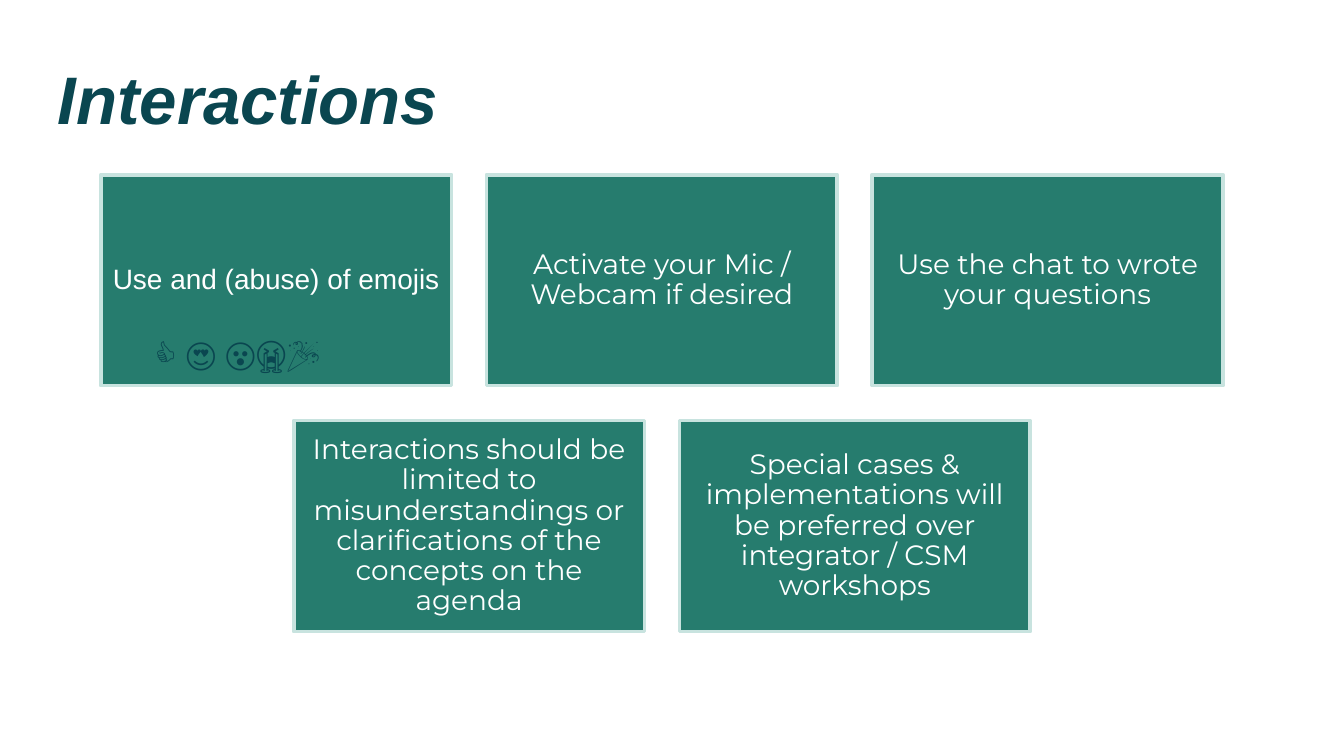
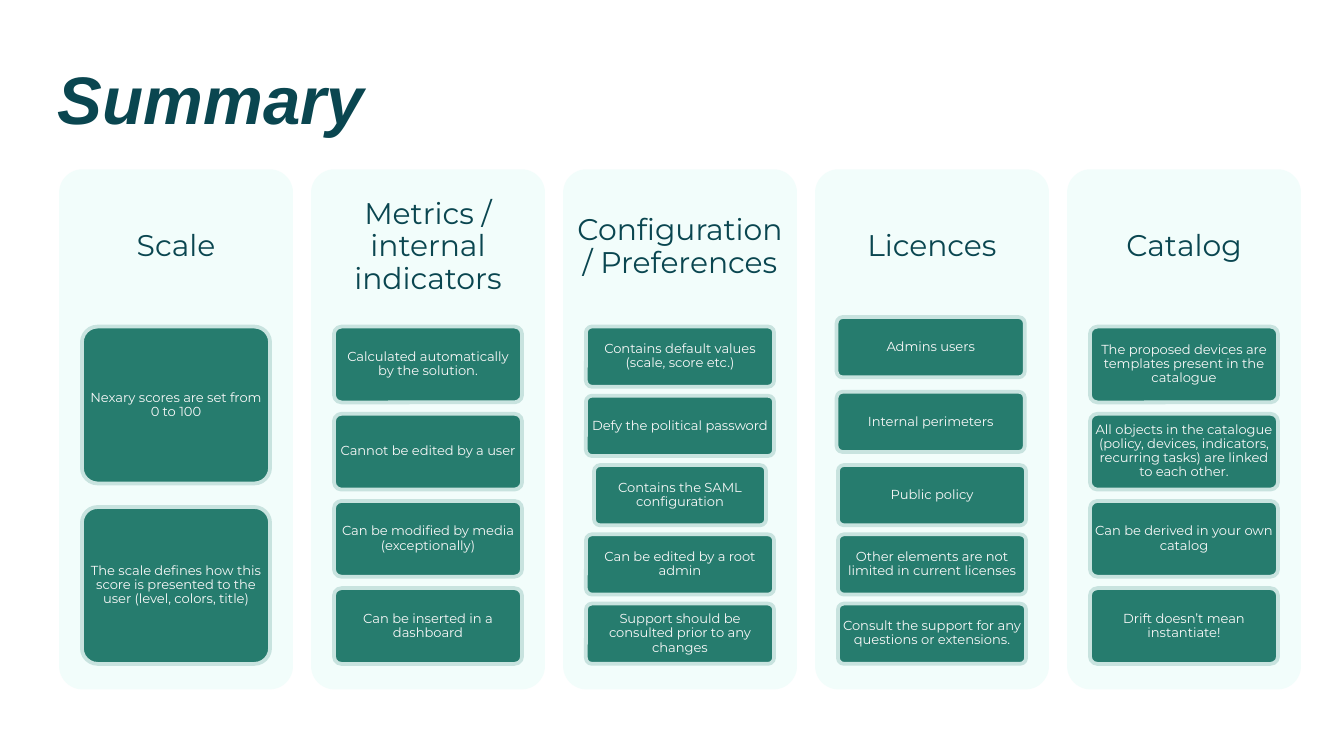
from pptx import Presentation
from pptx.dml.color import RGBColor
from pptx.enum.shapes import MSO_SHAPE
from pptx.enum.text import MSO_ANCHOR, MSO_AUTO_SIZE, PP_ALIGN
from pptx.util import Inches, Pt

INK, GREEN, MINT, PALE = "0A4650", "267C6E", "C8E3DF", "F2FDFB"
WHITE, OFF_WHITE = "FFFFFF", "F8F8F8"
HEADING_FONT, BODY_FONT = "Arial", "Montserrat"

RULE_ROWS = [
    ["Use and (abuse) of emojis",
     "Activate your Mic / Webcam if desired",
     "Use the chat to wrote your questions"],
    ["Interactions should be limited to misunderstandings or clarifications "
     "of the concepts on the agenda",
     "Special cases & implementations will be preferred over integrator / CSM workshops"],
]

TOPICS = {
    "Scale": [
        "Nexary scores are set from 0 to 100",
        "The scale defines how this score is presented to the user (level, colors, title)"],
    "Metrics / internal indicators": [
        "Calculated automatically by the solution.",
        "Cannot be edited by a user",
        "Can be modified by media (exceptionally)",
        "Can be inserted in a dashboard"],
    "Configuration / Preferences": [
        "Contains default values (scale, score etc.)",
        "Defy the political password",
        "Contains the SAML configuration",
        "Can be edited by a root admin",
        "Support should be consulted prior to any changes"],
    "Licences": [
        "Admins users",
        "Internal perimeters",
        "Public policy",
        "Other elements are not limited in current licenses",
        "Consult the support for any questions or extensions."],
    "Catalog": [
        "The proposed devices are templates present in the catalogue",
        "All objects in the catalogue (policy, devices, indicators, recurring tasks) "
        "are linked to each other.",
        "Can be derived in your own catalog",
        "Drift doesn’t mean instantiate!"],
}

# Points set off the regular stack: shift right, shift down, extra width
ADJUSTMENTS = {
    "Contains the SAML configuration": (0.06, 0, -0.12),
    "Admins users": (-0.01, -0.07, 0),
    "Internal perimeters": (-0.01, -0.03, 0),
}


def rgb(value):
    return RGBColor.from_string(value)


def inches(*lengths):
    return [Inches(length) for length in lengths]


def write(frame, text, size, color, font=BODY_FONT, insets=(0, 0), align=PP_ALIGN.CENTER):
    """Fill a frame with one middle-anchored paragraph; insets are side, top/bottom."""
    frame.word_wrap = True
    frame.auto_size = MSO_AUTO_SIZE.NONE
    frame.vertical_anchor = MSO_ANCHOR.MIDDLE
    frame.margin_left = frame.margin_right = Inches(insets[0])
    frame.margin_top = frame.margin_bottom = Inches(insets[1])
    frame.text = text
    paragraph = frame.paragraphs[0]
    paragraph.alignment = align
    paragraph.font.size = Pt(size)
    paragraph.font.name = font
    paragraph.font.color.rgb = rgb(color)
    return paragraph


def add_box(slide, kind, box, fill, outline=None):
    shape = slide.shapes.add_shape(kind, *inches(*box))
    shape.shadow.inherit = False
    shape.fill.solid()
    shape.fill.fore_color.rgb = rgb(fill)
    if kind == MSO_SHAPE.ROUNDED_RECTANGLE:
        shape.adjustments[0] = 0.1
    if outline:
        shape.line.color.rgb = rgb(outline)
        shape.line.width = Pt(2)
    else:
        shape.line.fill.background()
    return shape


def add_titled_slide(prs, heading):
    slide = prs.slides.add_slide(prs.slide_layouts[5])
    title = slide.shapes.title
    title.left, title.top, title.width, title.height = inches(0.43, 0.37, 8.44, 0.71)
    paragraph = write(title.text_frame, heading, 36, INK, HEADING_FONT, align=PP_ALIGN.LEFT)
    paragraph.font.bold = paragraph.font.italic = True
    return slide


def add_rule_tiles(slide, left, top, width):
    """Lay out the tiles in rows, each row centred in the width."""
    tile_w, tile_h, gap = 2.61, 1.57, 0.26
    for row, rules in enumerate(RULE_ROWS):
        row_w = len(rules) * (tile_w + gap) - gap
        row_left = left + (width - row_w) / 2
        for column, rule in enumerate(rules):
            box = (row_left + column * (tile_w + gap), top + row * (tile_h + gap),
                   tile_w, tile_h)
            tile = add_box(slide, MSO_SHAPE.RECTANGLE, box, GREEN, MINT)
            font = HEADING_FONT if "emojis" in rule else BODY_FONT
            write(tile.text_frame, rule, 15, WHITE, font, (0.06, 0.06)).line_spacing = 0.9


def add_emojis(slide, left, top):
    emojis = slide.shapes.add_textbox(*inches(left, top, 2.23, 0.4))
    write(emojis.text_frame, "👍 😍 😮😭🎉", 18, INK, insets=(0.1, 0.05), align=PP_ALIGN.LEFT)
    emojis.text_frame.vertical_anchor = MSO_ANCHOR.TOP
    emojis.text_frame.auto_size = MSO_AUTO_SIZE.SHAPE_TO_FIT_TEXT


def add_points(slide, points, left, top, width, height):
    """Stack the points over the full height, with gaps in proportion to them."""
    gap_ratio = 0.15
    point_h = height / (len(points) + (len(points) - 1) * gap_ratio)
    for index, point in enumerate(points):
        right, down, wider = ADJUSTMENTS.get(point, (0, 0, 0))
        box = (left + right, top + index * point_h * (1 + gap_ratio) + down,
               width + wider, point_h)
        pill = add_box(slide, MSO_SHAPE.ROUNDED_RECTANGLE, box, GREEN, MINT)
        write(pill.text_frame, point, 7, OFF_WHITE, insets=(0.02, 0.01)).line_spacing = 0.9


def add_topic(slide, topic, points, left, top, width, height):
    add_box(slide, MSO_SHAPE.ROUNDED_RECTANGLE, (left, top, width, height), PALE)
    header = slide.shapes.add_textbox(*inches(left, top, width, height * 0.3))
    write(header.text_frame, topic, 16, INK, insets=(0.07, 0.07)).line_spacing = 0.9
    add_points(slide, points, left + 0.17, top + 1.17, width - 0.34, height - 1.36)


def build_interactions(prs):
    slide = add_titled_slide(prs, "Interactions")
    add_rule_tiles(slide, 0.75, 1.3, 8.35)
    add_emojis(slide, 1.05, 2.43)


def build_summary(prs):
    slide = add_titled_slide(prs, "Summary")
    left, full_w, topic_w = 0.44, 9.24, 1.74
    pitch = (full_w - topic_w) / (len(TOPICS) - 1)
    for index, (topic, points) in enumerate(TOPICS.items()):
        add_topic(slide, topic, points, left + index * pitch, 1.26, topic_w, 3.87)


def main():
    prs = Presentation()
    prs.slide_width = Inches(10)
    prs.slide_height = prs.slide_width * 9 // 16
    build_interactions(prs)
    build_summary(prs)
    prs.save("out.pptx")


if __name__ == "__main__":
    main()
